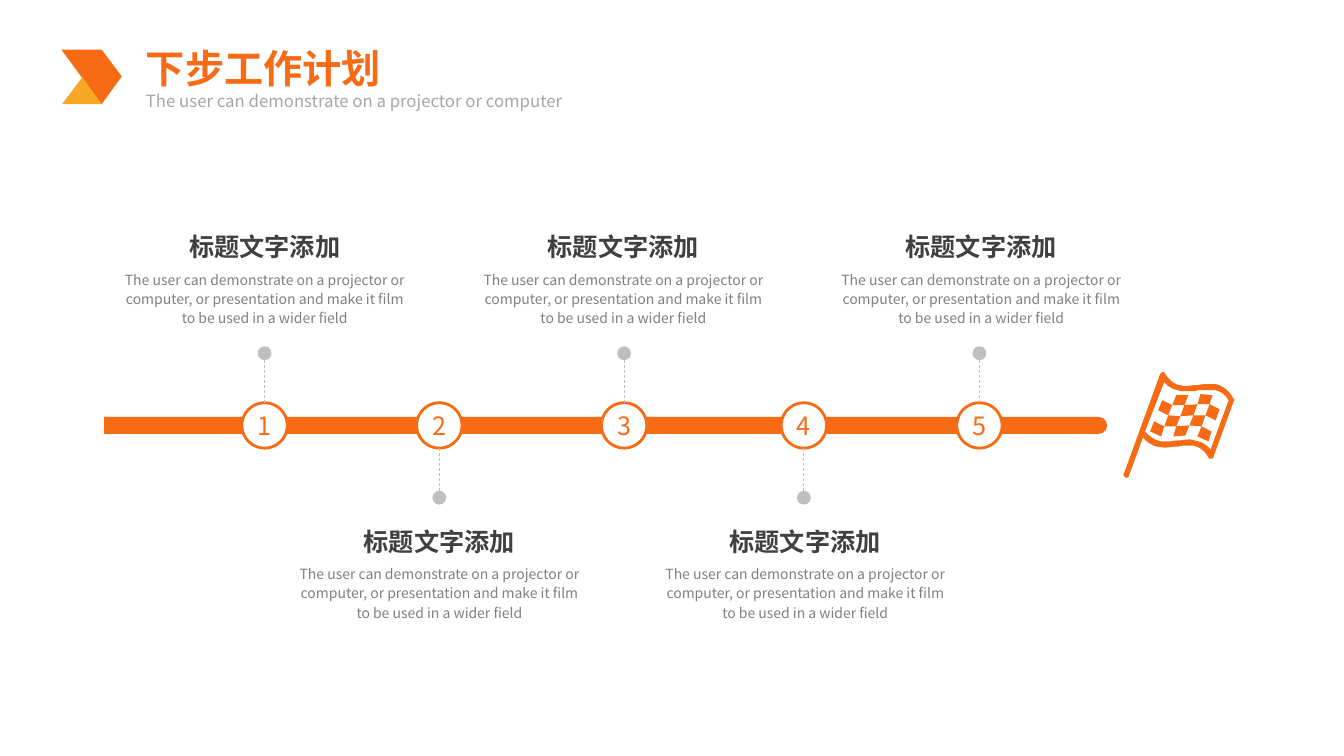
from dataclasses import dataclass

from lxml.etree import SubElement
from pptx import Presentation
from pptx.dml.color import RGBColor
from pptx.enum.dml import MSO_LINE
from pptx.enum.shapes import MSO_CONNECTOR, MSO_SHAPE
from pptx.enum.text import MSO_ANCHOR, PP_ALIGN
from pptx.oxml.ns import qn
from pptx.util import Emu, Inches, Pt

COLUMNS, ROWS = 160, 90
CELL = Inches(7.5) / ROWS
FONT = "Noto Sans CJK SC"
COLORS = {
    "orange": "F76B14",
    "amber": "F8A724",
    "white": "FFFFFF",
    "heading": "404040",
    "body": "808080",
    "subtitle": "A6A6A6",
    "stem": "BFBFBF",
}

AXIS_ROW = 50.65
BAR_HEIGHT = 2.04
NODE_SIZE = 5.4
STEM_LENGTH = 5.9
HEADING = "标题文字添加"
BODY = ("The user can demonstrate on a projector or computer, "
        "or presentation and make it film to be used in a wider field")


@dataclass(frozen=True)
class Milestone:
    number: int
    column: float
    text_column: float

    @property
    def above(self) -> bool:
        return self.number % 2 == 1


MILESTONES = [
    Milestone(1, 31.5, 31.5),
    Milestone(2, 52.3, 52.3),
    Milestone(3, 74.3, 74.2),
    Milestone(4, 95.7, 95.85),
    Milestone(5, 116.6, 116.8),
]

FLAG_COLUMN, FLAG_ROW, FLAG_UNIT = 133.68, 44.28, 0.12
FLAG_OUTLINE = [
    (40, 0), (41, 0, 42, 1, 42, 2), (46, 8, 50, 11, 55, 13),
    (57, 13, 60, 14, 62, 14), (65, 14, 69, 13, 72, 13), (75, 13),
    (78, 12, 82, 12, 85, 12), (88, 12, 90, 12, 92, 12),
    (100, 14, 106, 19, 110, 27), (111, 27, 111, 28, 110, 29), (90, 84),
    (90, 86, 89, 86, 87, 86), (86, 86, 85, 86, 85, 85),
    (81, 78, 77, 75, 70, 73), (69, 73, 67, 73, 65, 73),
    (61, 73, 58, 73, 55, 74), (52, 74), (49, 74, 45, 75, 42, 75),
    (39, 75, 36, 74, 33, 74), (30, 73, 24, 70, 20, 65), (6, 103),
    (6, 104, 5, 105, 3, 105), (3, 105, 3, 104, 2, 104),
    (1, 104, 0, 102, 1, 101), (37, 2), (38, 1, 39, 0, 40, 0),
]
FLAG_FIELD = [
    (41, 10), (22, 59), (25, 63, 31, 67, 35, 68), (37, 69, 39, 69, 42, 69),
    (45, 69, 48, 69, 51, 68), (54, 68), (58, 68, 61, 67, 65, 67),
    (67, 67, 69, 67, 71, 68), (78, 69, 83, 72, 87, 77), (105, 28),
    (101, 22, 97, 19, 91, 18), (89, 18, 87, 18, 85, 18),
    (82, 18, 78, 18, 75, 18), (72, 19), (69, 19, 66, 19, 62, 19),
    (59, 19, 57, 19, 54, 18), (49, 17, 44, 14, 41, 10),
]
FLAG_CHECKS = [
    [(78, 54), (88, 59), (85, 69), (74, 64)],
    [(66, 53), (62, 63), (50, 64), (53, 54)],
    [(31, 49), (41, 54), (38, 64), (27, 59)],
    [(45, 43), (57, 44), (53, 54), (41, 54)],
    [(70, 43), (82, 43), (78, 54), (66, 53)],
    [(86, 32), (96, 37), (92, 48), (82, 43)],
    [(74, 32), (70, 43), (57, 44), (61, 33)],
    [(39, 28), (49, 33), (45, 43), (35, 38)],
    [(53, 23), (65, 23), (61, 33), (49, 33)],
    [(77, 22), (89, 23), (86, 32), (74, 32)],
]


def cells(*counts: float) -> tuple:
    return tuple(Emu(round(count * CELL)) for count in counts)


def rgb(color: str) -> RGBColor:
    return RGBColor.from_string(COLORS[color])


def paint(shape, fill: str, line: str | None = None) -> None:
    shape.shadow.inherit = False
    shape.fill.solid()
    shape.fill.fore_color.rgb = rgb(fill)
    if line:
        shape.line.color.rgb = rgb(line)
        shape.line.width = Pt(2)
    else:
        shape.line.fill.background()


def write(shape, text: str, *, size: float, color: str, bold: bool = False,
          align=PP_ALIGN.CENTER, wrap: bool = True, spacing: float | None = None) -> None:
    shape.text_frame.word_wrap = wrap
    paragraph = shape.text_frame.paragraphs[0]
    paragraph.alignment = align
    paragraph.line_spacing = spacing
    run = paragraph.add_run()
    run.text = text
    run.font.size = Pt(size)
    run.font.bold = bold
    run.font.color.rgb = rgb(color)
    run.font.name = FONT
    SubElement(run._r.get_or_add_rPr(), qn("a:ea"), typeface=FONT)


def add_text(slide, box: tuple, text: str, **style) -> None:
    write(slide.shapes.add_textbox(*cells(*box)), text, **style)


def add_outline(slide, contours: list, fill: str) -> None:
    first, *others = [[cells(*point) for point in contour] for contour in contours]
    builder = slide.shapes.build_freeform(*first[0], scale=1.0)
    builder.add_line_segments(first[1:], close=True)
    for contour in others:
        builder.move_to(*contour[0])
        builder.add_line_segments(contour[1:], close=True)
    paint(builder.convert_to_shape(), fill)


def flatten(segments: list, steps: int = 6) -> list:
    points = [segments[0]]
    for segment in segments[1:]:
        if len(segment) == 2:
            points.append(segment)
            continue
        start, a, b, end = points[-1], segment[:2], segment[2:4], segment[4:]
        for t in (step / steps for step in range(1, steps + 1)):
            u = 1 - t
            points.append(tuple(
                u**3 * p + 3 * u * u * t * q + 3 * u * t * t * r + t**3 * s
                for p, q, r, s in zip(start, a, b, end)))
    return [(FLAG_COLUMN + x * FLAG_UNIT, FLAG_ROW + y * FLAG_UNIT) for x, y in points]


def add_header(slide) -> None:
    add_outline(slide, [[(14.5, 9.1), (12.1, 12.4), (7.3, 5.9), (12.1, 5.9)]], "orange")
    add_outline(slide, [[(9.8, 9.2), (7.4, 12.4), (12.1, 12.4)]], "amber")
    add_text(slide, (16.2, 4.7, 30.7, 6.8), "下步工作计划", size=28, color="orange",
             bold=True, align=PP_ALIGN.LEFT, wrap=False)
    add_text(slide, (16.2, 10.2, 66.5, 3.6),
             "The user can demonstrate on a projector or computer",
             size=12, color="subtitle", align=PP_ALIGN.LEFT)


def add_road(slide) -> None:
    top = AXIS_ROW - BAR_HEIGHT / 2
    for preset, left, width in ((MSO_SHAPE.ROUNDED_RECTANGLE, 31.8, 100),
                                (MSO_SHAPE.RECTANGLE, 12.36, 21)):
        bar = slide.shapes.add_shape(preset, *cells(left, top, width, BAR_HEIGHT))
        paint(bar, "orange")
        if preset == MSO_SHAPE.ROUNDED_RECTANGLE:
            bar.adjustments[0] = 0.5


def add_milestone(slide, milestone: Milestone) -> None:
    radius = NODE_SIZE / 2
    node = slide.shapes.add_shape(MSO_SHAPE.OVAL, *cells(
        milestone.column - radius, AXIS_ROW - radius, NODE_SIZE, NODE_SIZE))
    paint(node, "white", "orange")
    frame = node.text_frame
    frame.margin_left = frame.margin_right = frame.margin_top = frame.margin_bottom = 0
    frame.vertical_anchor = MSO_ANCHOR.MIDDLE
    write(node, str(milestone.number), size=18, color="orange", wrap=False)

    direction = -1 if milestone.above else 1
    edge = AXIS_ROW + direction * radius
    stem = slide.shapes.add_connector(MSO_CONNECTOR.STRAIGHT, *cells(
        milestone.column, edge, milestone.column, edge + direction * STEM_LENGTH))
    stem.line.color.rgb = rgb("stem")
    stem.line.width = Pt(0.5)
    stem.line.dash_style = MSO_LINE.DASH
    SubElement(stem.line._get_or_add_ln(), qn("a:tailEnd"), type="oval", w="lg", len="lg")
    SubElement(stem._element.spPr, qn("a:effectLst"))

    top = 27 if milestone.above else 62.04
    add_text(slide, (milestone.text_column - 14, top, 28, 4.8), HEADING,
             size=18, color="heading", bold=True)
    add_text(slide, (milestone.text_column - 18.2, top + 4.44, 36.4, 8.2), BODY,
             size=10, color="body", spacing=1.14)


def main() -> None:
    deck = Presentation()
    deck.slide_width, deck.slide_height = cells(COLUMNS, ROWS)
    slide = deck.slides.add_slide(deck.slide_layouts[6])
    add_road(slide)
    for milestone in MILESTONES:
        add_milestone(slide, milestone)
    add_outline(slide, [flatten(part) for part in (FLAG_OUTLINE, FLAG_FIELD, *FLAG_CHECKS)],
                "orange")
    add_header(slide)
    deck.save("out.pptx")


if __name__ == "__main__":
    main()
